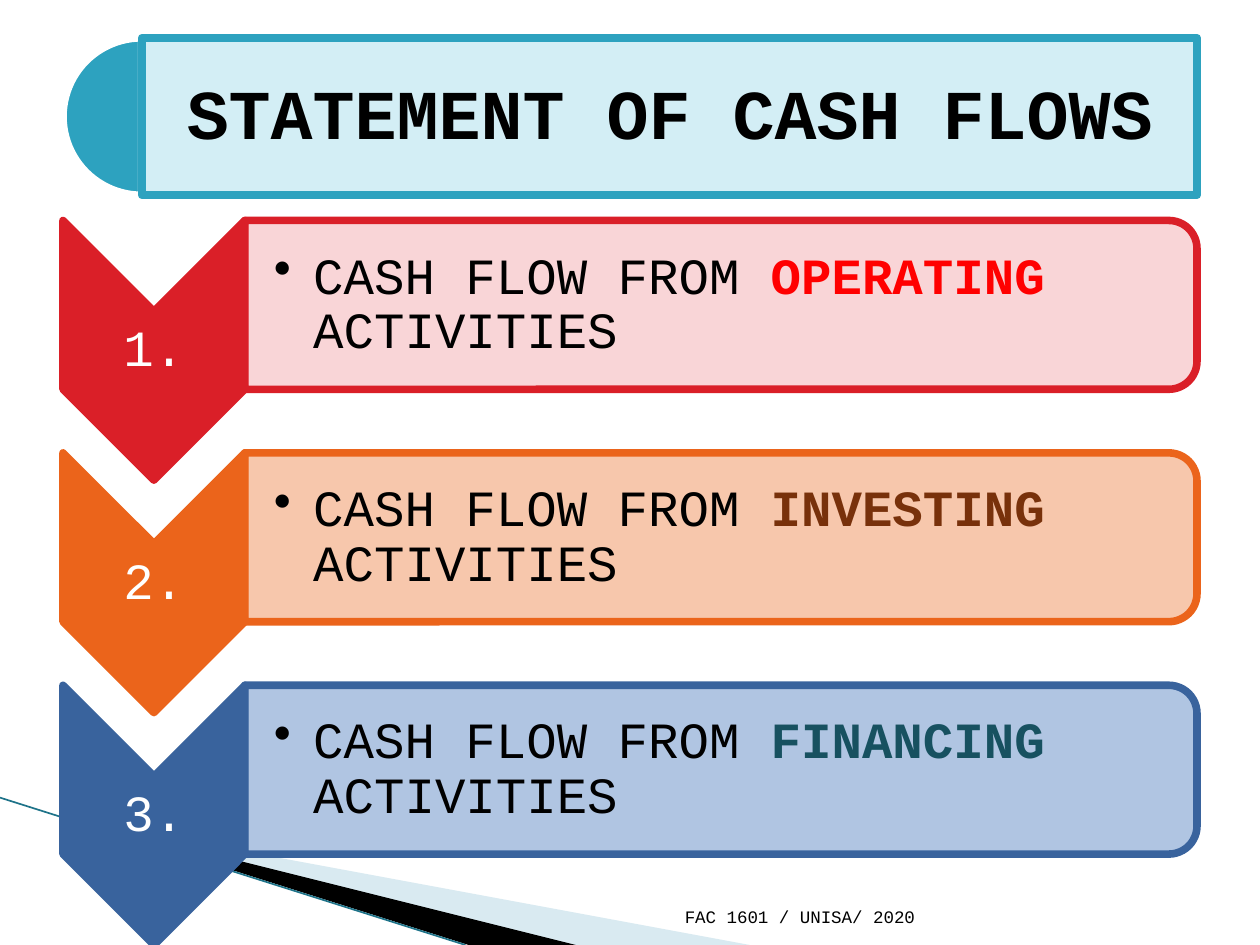
from dataclasses import dataclass

import lxml.etree
import pptx
import pptx.dml.color
import pptx.enum.shapes
import pptx.enum.text
import pptx.oxml.ns
import pptx.util

Pt = pptx.util.Pt
RGBColor = pptx.dml.color.RGBColor
Shape = pptx.enum.shapes.MSO_SHAPE
Align = pptx.enum.text.PP_ALIGN
Anchor = pptx.enum.text.MSO_ANCHOR
qn = pptx.oxml.ns.qn

BLACK = RGBColor(0x00, 0x00, 0x00)
WHITE = RGBColor(0xFF, 0xFF, 0xFF)
TEAL = RGBColor(0x2D, 0xA2, 0xBF)
PALE_TEAL = RGBColor(0xD3, 0xEE, 0xF5)
DARK_TEAL = RGBColor(0x1E, 0x73, 0x89)
MIST = RGBColor(0xA0, 0xCB, 0xDC)
RED = RGBColor(0xDA, 0x1F, 0x28)
PALE_RED = RGBColor(0xF9, 0xD1, 0xD3)
BRIGHT_RED = RGBColor(0xFF, 0x00, 0x00)
ORANGE = RGBColor(0xEB, 0x64, 0x1B)
PALE_ORANGE = RGBColor(0xF7, 0xC1, 0xA4)
BROWN = RGBColor(0x78, 0x31, 0x0B)
BLUE = RGBColor(0x39, 0x63, 0x9D)
PALE_BLUE = RGBColor(0xA8, 0xBF, 0xDF)
DEEP_TEAL = RGBColor(0x17, 0x51, 0x60)

FONT = "Courier New"
BORDER = 4.33
STEP_TOP, STEP_PITCH = 126, 132.8


@dataclass(frozen=True)
class Frame:
    left: float
    top: float
    width: float
    height: float

    def lengths(self) -> tuple:
        return Pt(self.left), Pt(self.top), Pt(self.width), Pt(self.height)

    def turned(self) -> "Frame":
        """Frame that covers this one after a quarter turn."""
        shift = (self.width - self.height) / 2
        return Frame(self.left + shift, self.top - shift, self.height, self.width)


@dataclass(frozen=True)
class Span:
    text: str
    size: float
    color: RGBColor = BLACK
    bold: bool = False


@dataclass(frozen=True)
class Step:
    number: str
    activity: str
    strong: RGBColor
    pale: RGBColor
    accent: RGBColor


STEPS = (
    Step("1.", "OPERATING", RED, PALE_RED, BRIGHT_RED),
    Step("2.", "INVESTING", ORANGE, PALE_ORANGE, BROWN),
    Step("3.", "FINANCING", BLUE, PALE_BLUE, DEEP_TEAL),
)


def apply(target, **values) -> None:
    for name, value in values.items():
        setattr(target, name, value)


def paint(shape, fill: RGBColor, line: RGBColor | None = None, opacity: int = 100) -> None:
    shape.shadow.inherit = False
    shape.fill.solid()
    shape.fill.fore_color.rgb = fill
    if opacity < 100:
        color = shape.fill._xPr.find(".//" + qn("a:srgbClr"))
        lxml.etree.SubElement(color, qn("a:alpha"), val=str(opacity * 1000))
    if line is None:
        shape.line.fill.background()
    else:
        shape.line.color.rgb = line
        shape.line.width = Pt(BORDER)


def add_block(slide, kind, frame: Frame, fill: RGBColor, line: RGBColor,
              opacity: int = 100, rotation: int = 0):
    placed = frame.turned() if rotation else frame
    shape = slide.shapes.add_shape(kind, *placed.lengths())
    shape.rotation = rotation
    paint(shape, fill, line, opacity)
    return shape


def add_wedge(slide, points: list, fill: RGBColor, opacity: int = 100) -> None:
    corners = [(Pt(x), Pt(y)) for x, y in points]
    builder = slide.shapes.build_freeform(*corners[0])
    builder.add_line_segments(corners[1:], close=True)
    paint(builder.convert_to_shape(), fill, opacity=opacity)


def add_text(slide, frame: Frame, spans: list, insets: tuple, align=Align.LEFT,
             anchor=Anchor.MIDDLE, spacing: float = 0.9, hanging: float = 0) -> None:
    """Add one paragraph; a hanging indent above zero gives it a bullet."""
    box = slide.shapes.add_textbox(*frame.lengths()).text_frame
    sides = ("margin_left", "margin_top", "margin_right", "margin_bottom")
    apply(box, word_wrap=True, vertical_anchor=anchor,
          **{side: Pt(inset) for side, inset in zip(sides, insets)})
    para = box.paragraphs[0]
    apply(para, alignment=align, line_spacing=spacing)
    if hanging:
        properties = para._p.get_or_add_pPr()
        properties.set("marL", str(Pt(hanging)))
        properties.set("indent", str(-Pt(hanging)))
        lxml.etree.SubElement(properties, qn("a:buChar"), char="•")
    for span in spans:
        run = para.add_run()
        run.text = span.text
        apply(run.font, name=FONT, size=Pt(span.size), bold=span.bold)
        run.font.color.rgb = span.color


def add_backdrop(slide) -> None:
    add_wedge(slide, [(39.6, 468), (428.4, 540), (328.3, 540)], MIST, 40)
    add_wedge(slide, [(38.2, 467.3), (329, 540), (267.8, 540)], BLACK)
    edge = slide.shapes.add_connector(
        pptx.enum.shapes.MSO_CONNECTOR.STRAIGHT, Pt(0), Pt(455.8), Pt(266), Pt(540))
    edge.line.color.rgb = DARK_TEAL
    edge.line.width = Pt(0.95)
    lxml.etree.SubElement(edge._element.spPr, qn("a:effectLst"))


def add_title(slide) -> None:
    half_disc = add_block(slide, Shape.PIE, Frame(36, 21.6, 90, 90), TEAL, WHITE)
    half_disc.adjustments[0] = 54
    half_disc.adjustments[1] = 162
    banner = Frame(81, 21.6, 603, 90)
    add_block(slide, Shape.RECTANGLE, banner, PALE_TEAL, TEAL)
    add_text(slide, banner, [Span("STATEMENT OF CASH FLOWS", 40, bold=True)],
             (2, 2, 2, 2), Align.CENTER)


def add_step(slide, step: Step, top: float) -> None:
    add_block(slide, Shape.CHEVRON, Frame(36, top, 103.9, 148.4),
              step.strong, step.strong, rotation=90)
    add_text(slide, Frame(36, top + 52, 103.9, 44.5), [Span(step.number, 29, WHITE)],
             (1.4, 1.4, 1.4, 1.4), Align.CENTER)
    add_block(slide, Shape.ROUND_2_SAME_RECTANGLE, Frame(139.9, top, 544.1, 96.5),
              step.pale, step.strong, 90, 90)
    spans = [Span("CASH FLOW FROM ", 29), Span(step.activity + " ", 29, step.accent, True),
             Span("ACTIVITIES", 29)]
    add_text(slide, Frame(139.9, top + 4.7, 540, 87.1), spans,
             (16.6, 1.4, 1.4, 1.4), hanging=22.5)


def main() -> None:
    deck = pptx.Presentation()
    apply(deck, slide_width=Pt(720), slide_height=Pt(540))
    page = deck.slides.add_slide(deck.slide_layouts[6])
    add_backdrop(page)
    add_title(page)
    for index, step in enumerate(STEPS):
        add_step(page, step, STEP_TOP + index * STEP_PITCH)
    add_text(page, Frame(344.9, 504.7, 185, 28.8), [Span("FAC 1601 / UNISA/ 2020", 10)],
             (7.2, 3.6, 7.2, 3.6), Align.RIGHT, Anchor.BOTTOM, 1.0)
    deck.save("out.pptx")


if __name__ == "__main__":
    main()
